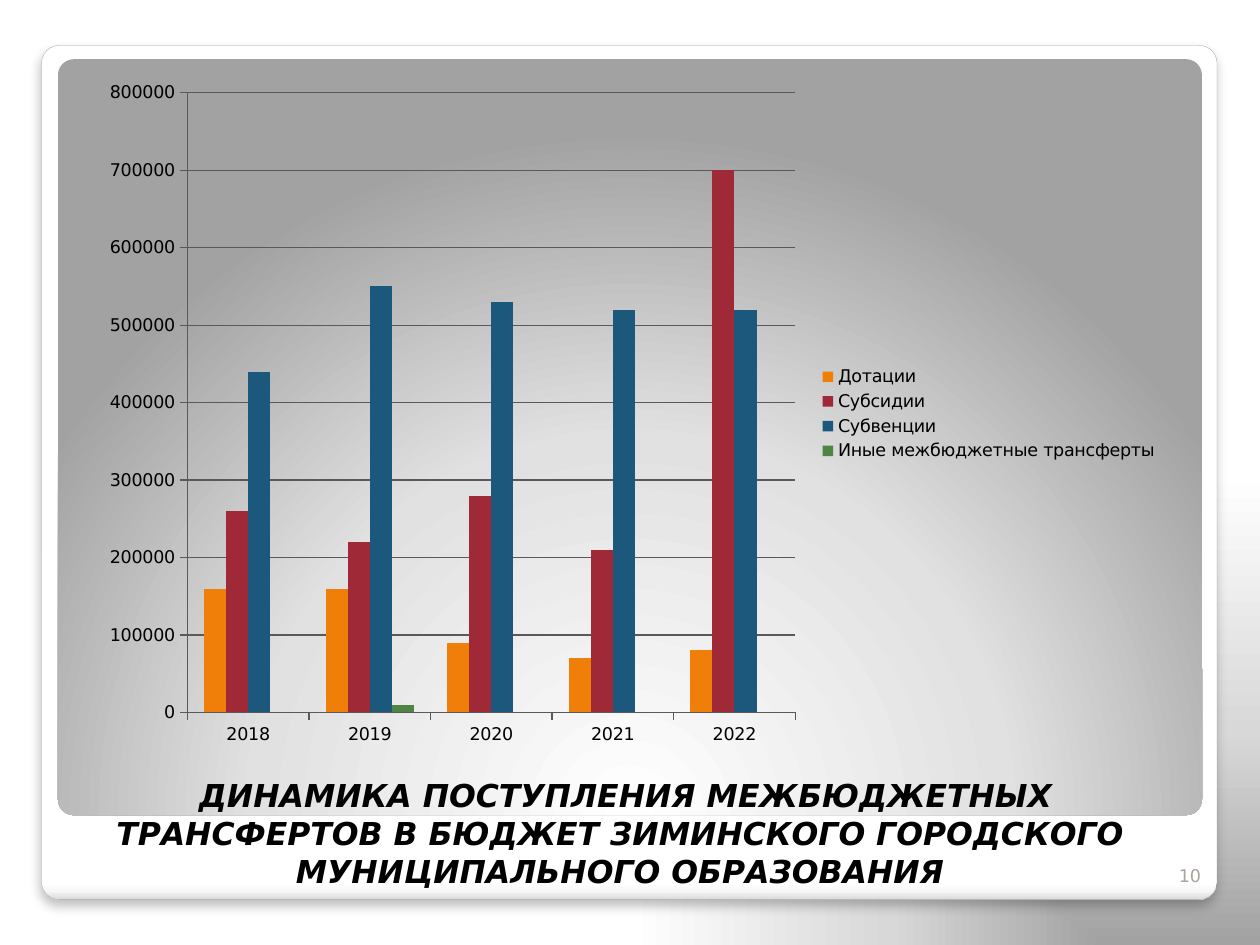
from dataclasses import dataclass
from typing import NamedTuple, Optional

from lxml import etree
from pptx import Presentation
from pptx import util as u
from pptx.chart import data as chart_data
from pptx.dml import color
from pptx.enum import chart as charts, shapes, text
from pptx.oxml import ns


class Box(NamedTuple):
    left: float
    top: float
    width: float
    height: float


class Gradient(NamedTuple):
    stops: tuple
    angle: Optional[int] = None
    path_kind: str = ""
    focus: tuple = ()


class Series(NamedTuple):
    name: str
    values: tuple
    fill: str


class Label(NamedTuple):
    box: Box
    words: str
    size: float
    ink: str
    align: text.PP_ALIGN
    strong: bool


@dataclass(frozen=True)
class Theme:
    font: str = "DejaVu Sans"
    ink: str = "000000"
    muted: str = "A8A49B"
    edge: str = "A4A4A4"
    axis: str = "595959"
    title_size: float = 18
    small_size: float = 10
    corner: float = 0.021
    backdrop: Gradient = Gradient(
        ((0, "A2A2A2"), (45, "D8D8D8"), (100, "FFFFFF")), None, "rect", (100, 100, 0, 0))
    card: Gradient = Gradient(
        ((0, "FFFFFF"), (98, "FFFFFF"), (99, "F7F7F7"), (100, "DADADA")), 90)
    panel: Gradient = Gradient(
        ((0, "FFFFFF"), (55, "E1E1E1"), (100, "A2A2A2")), None, "circle", (50, 175, 50, -75))


THEME = Theme()
WIDTH, HEIGHT = u.Inches(10), u.Inches(7.5)
CARD = Box(3.3, 4.8, 93.3, 90.4)
PANEL = Box(4.6, 6.27, 90.8, 80)
CHART = Box(7, 7.33, 85.9, 72.93)
YEARS = ("2018", "2019", "2020", "2021", "2022")
SERIES = (
    Series("Дотации", (160000, 160000, 90000, 70000, 80000), "F07F09"),
    Series("Субсидии", (260000, 220000, 280000, 210000, 700000), "9F2936"),
    Series("Субвенции", (440000, 550000, 530000, 520000, 520000), "1B587C"),
    Series("Иные межбюджетные трансферты", (None, 10000, None, None, None), "4E8542"),
)
LABELS = (
    Label(Box(4.3, 81.2, 90.7, 13.6),
          "ДИНАМИКА ПОСТУПЛЕНИЯ МЕЖБЮДЖЕТНЫХ ТРАНСФЕРТОВ В БЮДЖЕТ ЗИМИНСКОГО ГОРОДСКОГО "
          "\vМУНИЦИПАЛЬНОГО ОБРАЗОВАНИЯ ",
          THEME.title_size, THEME.ink, text.PP_ALIGN.CENTER, True),
    Label(Box(91.3, 89.07, 5, 5.33), "10",
          THEME.small_size, THEME.muted, text.PP_ALIGN.RIGHT, False),
)


def rgb(value: str) -> color.RGBColor:
    return color.RGBColor.from_string(value)


def place(box: Box) -> tuple:
    """Turn percentages of the slide into lengths."""
    return tuple(int(share * side / 100) for share, side in zip(box, (WIDTH, HEIGHT) * 2))


def add_node(parent, tag: str, **attributes):
    return etree.SubElement(parent, ns.qn(tag), {key: str(value) for key, value in attributes.items()})


def paint_gradient(element, fill, gradient: Gradient) -> None:
    fill.gradient()
    node = next(element.iter(ns.qn("a:gradFill")))
    for child in list(node):
        node.remove(child)
    stops = add_node(node, "a:gsLst")
    for position, value in gradient.stops:
        stop = add_node(stops, "a:gs", pos=position * 1000)
        add_node(stop, "a:srgbClr", val=value)
    if gradient.path_kind:
        route = add_node(node, "a:path", path=gradient.path_kind)
        sides = {side: share * 1000 for side, share in zip("ltrb", gradient.focus)}
        add_node(route, "a:fillToRect", **sides)
    else:
        add_node(node, "a:lin", ang=gradient.angle * 60000, scaled=0)


def add_rounded(slide, box: Box, gradient: Gradient):
    shape = slide.shapes.add_shape(shapes.MSO_SHAPE.ROUNDED_RECTANGLE, *place(box))
    shape.adjustments[0] = THEME.corner
    shape.line.fill.background()
    shape.shadow.inherit = False
    paint_gradient(shape.element, shape.fill, gradient)
    return shape


def add_card(slide) -> None:
    card = add_rounded(slide, CARD, THEME.card)
    card.line.color.rgb = rgb(THEME.edge)
    card.line.width = u.Pt(0.16)
    effects = next(card.element.iter(ns.qn("a:effectLst")))
    shadow = add_node(effects, "a:outerShdw", blurRad=u.Pt(6), dist=u.Pt(4),
                      dir=90 * 60000, algn="t", rotWithShape=0)
    tint = add_node(shadow, "a:srgbClr", val=THEME.ink)
    add_node(tint, "a:alpha", val=25000)


def add_label(slide, label: Label) -> None:
    frame = slide.shapes.add_textbox(*place(label.box)).text_frame
    frame.word_wrap = True
    frame.vertical_anchor = text.MSO_ANCHOR.BOTTOM
    paragraph = frame.paragraphs[0]
    paragraph.text = label.words
    paragraph.alignment = label.align
    for run in paragraph.runs:
        run.font.name = THEME.font
        run.font.size = u.Pt(label.size)
        run.font.bold = run.font.italic = label.strong
        run.font.color.rgb = rgb(label.ink)


def add_transfers_chart(slide) -> None:
    data = chart_data.CategoryChartData()
    data.categories = YEARS
    for series in SERIES:
        data.add_series(series.name, series.values)
    chart = slide.shapes.add_chart(
        charts.XL_CHART_TYPE.COLUMN_CLUSTERED, *place(CHART), data).chart
    chart.has_title = False
    chart.font.name = THEME.font
    chart.font.size = u.Pt(THEME.small_size)
    chart.font.color.rgb = rgb(THEME.ink)
    chart.has_legend = True
    chart.legend.position = charts.XL_LEGEND_POSITION.RIGHT
    chart.legend.include_in_layout = False
    value_axis = chart.value_axis
    value_axis.minimum_scale, value_axis.maximum_scale = 0, 800000
    value_axis.major_unit = 100000
    value_axis.has_major_gridlines = True
    for axis in (chart.category_axis, value_axis):
        axis.major_tick_mark = charts.XL_TICK_MARK.OUTSIDE
    for item in (chart.category_axis, value_axis, value_axis.major_gridlines):
        item.format.line.color.rgb = rgb(THEME.axis)
        item.format.line.width = u.Pt(0.75)
    plot = chart.plots[0]
    plot.gap_width, plot.overlap = 150, 0
    plot.vary_by_categories = False
    for bars, series in zip(plot.series, SERIES):
        bars.format.fill.solid()
        bars.format.fill.fore_color.rgb = rgb(series.fill)


def main() -> None:
    presentation = Presentation()
    presentation.slide_width, presentation.slide_height = WIDTH, HEIGHT
    slide = presentation.slides.add_slide(presentation.slide_layouts[6])
    paint_gradient(slide.element, slide.background.fill, THEME.backdrop)
    add_card(slide)
    add_rounded(slide, PANEL, THEME.panel)
    for label in LABELS:
        add_label(slide, label)
    add_transfers_chart(slide)
    presentation.save("out.pptx")


if __name__ == "__main__":
    main()
